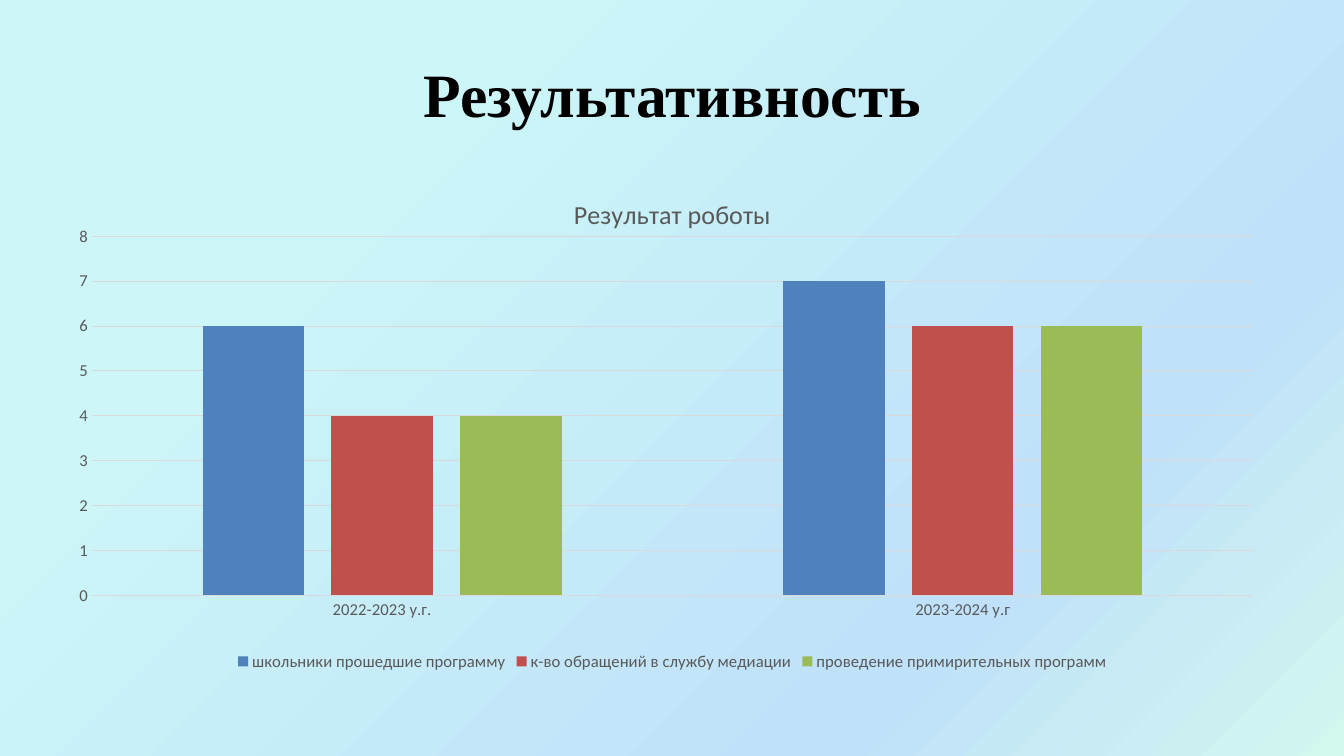
from pptx import Presentation
from pptx.chart.data import CategoryChartData
from pptx.dml.color import RGBColor
from pptx.enum.chart import XL_CHART_TYPE, XL_LEGEND_POSITION as LegendPosition, XL_TICK_MARK as TickMark
from pptx.enum.text import MSO_ANCHOR, PP_ALIGN
from pptx.oxml import parse_xml
from pptx.oxml.ns import nsdecls, qn
from pptx.util import Inches, Pt

BLACK = RGBColor(0x00, 0x00, 0x00)
GRAY = RGBColor(0x59, 0x59, 0x59)
GRID = RGBColor(0xD9, 0xD9, 0xD9)
OUTLINE = RGBColor(0x00, 0x66, 0xFF)
BLUE = RGBColor(0x4F, 0x81, 0xBD)
RED = RGBColor(0xC0, 0x50, 0x4D)
GREEN = RGBColor(0x9B, 0xBB, 0x59)
AQUA = RGBColor(0xCC, 0xF6, 0xF8)
SKY = RGBColor(0xBF, 0xE1, 0xF9)
MINT = RGBColor(0xD2, 0xF7, 0xEF)

YEARS = ["2022-2023 у.г.", "2023-2024 у.г"]
RESULTS = [
    ("школьники прошедшие программу", (6, 7), BLUE),
    ("к-во обращений в службу медиации", (4, 6), RED),
    ("проведение примирительных программ", (4, 6), GREEN),
]


class ResultsSlide:
    title_font = "Times New Roman"
    chart_font = "Calibri"

    def __init__(self, deck):
        self.page = deck.slides.add_slide(deck.slide_layouts[5])

    def background(self, stops, angle):
        fill = self.page.background.fill
        fill.gradient()
        fill.gradient_angle = 360 - angle
        stop_list = next(self.page.background._cSld.iter(qn("a:gsLst")))
        for old_stop in list(stop_list):
            stop_list.remove(old_stop)
        for percent, color in stops:
            stop_list.append(parse_xml(
                f'<a:gs {nsdecls("a")} pos="{percent * 1000}"><a:srgbClr val="{color}"/></a:gs>'))

    def title(self, text, left, top, width, height):
        box = self.page.shapes.title
        box.left, box.top, box.width, box.height = map(Inches, (left, top, width, height))
        box.text_frame.vertical_anchor = MSO_ANCHOR.MIDDLE
        para = box.text_frame.paragraphs[0]
        para.alignment = PP_ALIGN.CENTER
        span = para.add_run()
        span.text = text
        self.style(span.font, 44, BLACK, self.title_font, True)
        span.font._element.insert(0, parse_xml(
            f'<a:ln {nsdecls("a")} w="{Pt(1.45)}"><a:solidFill>'
            f'<a:srgbClr val="{OUTLINE}"/></a:solidFill></a:ln>'))

    def style(self, font, size, color, name, bold=False):
        font.size, font.name, font.bold = Pt(size), name, bold
        font.color.rgb = color

    def column_chart(self, heading, categories, results, left, top, width, height, plot_area):
        data = CategoryChartData()
        data.categories = categories
        for name, values, _ in results:
            data.add_series(name, values)
        chart = self.page.shapes.add_chart(
            XL_CHART_TYPE.COLUMN_CLUSTERED, *map(Inches, (left, top, width, height)), data).chart
        self.style(chart.font, 10, BLACK, self.chart_font)

        # Heading and legend
        chart.has_title = True
        chart.chart_title.include_in_layout = False
        para = chart.chart_title.text_frame.paragraphs[0]
        para.text = heading
        self.style(para.font, 18.6, GRAY, self.chart_font)
        chart.has_legend = True
        chart.legend.position = LegendPosition.BOTTOM
        chart.legend.include_in_layout = False
        self.style(chart.legend.font, 11.9, GRAY, self.chart_font)

        # Axes
        for axis in (chart.category_axis, chart.value_axis):
            axis.major_tick_mark = axis.minor_tick_mark = TickMark.NONE
            self.style(axis.tick_labels.font, 11.9, GRAY, self.chart_font)
        chart.value_axis.format.line.fill.background()
        chart.value_axis.has_major_gridlines = True
        for line in (chart.category_axis.format.line, chart.value_axis.major_gridlines.format.line):
            line.color.rgb = GRID
            line.width = Pt(0.75)

        # Columns
        plot = chart.plots[0]
        plot.gap_width, plot.overlap, plot.vary_by_categories = 219, -27, False
        for series, (_, _, color) in zip(plot.series, results):
            series.format.fill.solid()
            series.format.fill.fore_color.rgb = color
        self.place_plot(chart, plot_area)

    def place_plot(self, chart, plot_area):
        area = next(chart._chartSpace.iter(qn("c:plotArea")))
        for old_layout in area.findall(qn("c:layout")):
            area.remove(old_layout)
        sizes = "".join(f'<c:{tag} val="{value}"/>' for tag, value in zip("xywh", plot_area))
        area.insert(0, parse_xml(
            f'<c:layout {nsdecls("c")}><c:manualLayout><c:layoutTarget val="inner"/>'
            f'<c:xMode val="edge"/><c:yMode val="edge"/>{sizes}</c:manualLayout></c:layout>'))


def main():
    deck = Presentation()
    deck.slide_width, deck.slide_height = Inches(13.33), Inches(7.5)
    slide = ResultsSlide(deck)
    slide.background([(25, AQUA), (75, SKY), (100, MINT)], 45)
    slide.title("Результативность", 0.67, 0.3, 12, 1.25)
    slide.column_chart("Результат роботы", YEARS, RESULTS, 0.67, 1.75, 12, 4.95,
                       plot_area=(0.02, 0.12, 0.96, 0.72))
    deck.save("out.pptx")


if __name__ == "__main__":
    main()
